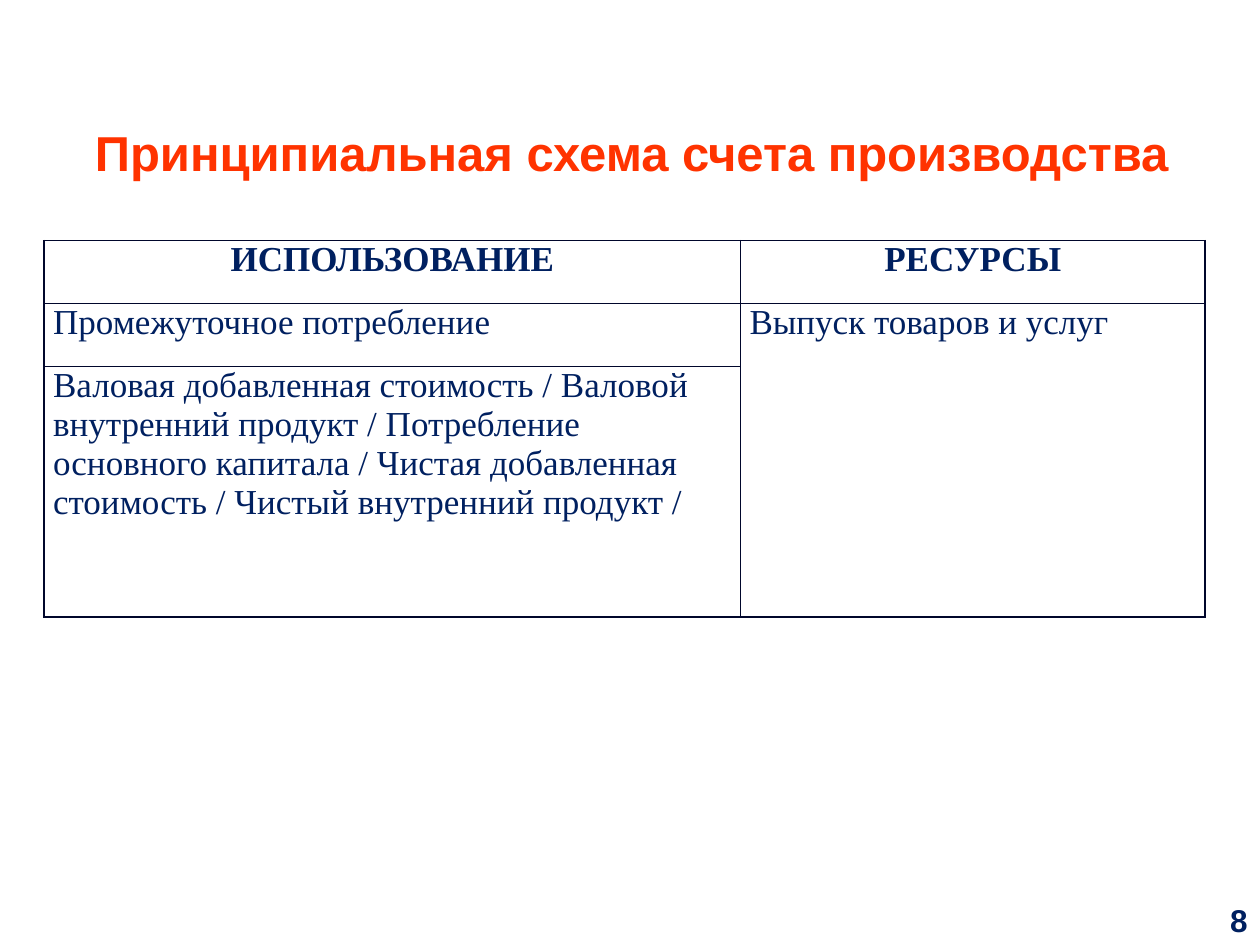
from dataclasses import dataclass

import lxml.etree
import pptx
import pptx.dml.color
import pptx.enum.text
import pptx.oxml.ns
import pptx.util

Cm = pptx.util.Cm
Align = pptx.enum.text.PP_ALIGN
Anchor = pptx.enum.text.MSO_ANCHOR


@dataclass(frozen=True)
class Theme:
    heading_font: str = "Arial"
    table_font: str = "Times New Roman"
    title_color: str = "FF3300"
    text_color: str = "002060"
    border_color: str = "00062B"
    background: str = "FFFFFF"
    title_size: int = 28
    table_size: int = 20
    number_size: int = 18
    border_width: int = 1


@dataclass(frozen=True)
class TextStyle:
    font: str
    size: int
    color: str
    bold: bool
    align: Align


@dataclass(frozen=True)
class AccountCell:
    row: int
    column: int
    text: str
    style: TextStyle


THEME = Theme()
TITLE = TextStyle(THEME.heading_font, THEME.title_size, THEME.title_color, True, Align.CENTER)
NUMBER = TextStyle(THEME.heading_font, THEME.number_size, THEME.text_color, True, Align.RIGHT)
HEADER = TextStyle(THEME.table_font, THEME.table_size, THEME.text_color, True, Align.CENTER)
BODY = TextStyle(THEME.table_font, THEME.table_size, THEME.text_color, False, Align.LEFT)

COLUMN_WIDTHS = (14.04, 9.36)
ROW_HEIGHTS = (1.27, 1.27, 5.05)
ACCOUNT_CELLS = (
    AccountCell(0, 0, "ИСПОЛЬЗОВАНИЕ", HEADER),
    AccountCell(0, 1, "РЕСУРСЫ", HEADER),
    AccountCell(1, 0, "Промежуточное потребление", BODY),
    AccountCell(1, 1, "Выпуск товаров и услуг", BODY),
    AccountCell(
        2,
        0,
        "Валовая добавленная стоимость / Валовой внутренний продукт / "
        "Потребление основного капитала / Чистая добавленная стоимость / "
        "Чистый внутренний продукт /",
        BODY,
    ),
)


def write_text(text_frame: pptx.text.text.TextFrame, text: str, style: TextStyle) -> None:
    text_frame.text = text
    text_frame.word_wrap = True
    paragraph = text_frame.paragraphs[0]
    paragraph.alignment = style.align
    for run in paragraph.runs:
        run.font.name = style.font
        run.font.size = pptx.util.Pt(style.size)
        run.font.bold = style.bold
        run.font.color.rgb = pptx.dml.color.RGBColor.from_string(style.color)


def format_cell(cell: pptx.table._Cell) -> None:
    cell.margin_left = cell.margin_right = Cm(0.18)
    cell.margin_top = cell.margin_bottom = 0
    cell.vertical_anchor = Anchor.TOP
    properties = cell._tc.get_or_add_tcPr()
    qualified = pptx.oxml.ns.qn
    for side in ("a:lnL", "a:lnR", "a:lnT", "a:lnB"):
        line = lxml.etree.SubElement(
            properties, qualified(side), w=str(pptx.util.Pt(THEME.border_width))
        )
        fill = lxml.etree.SubElement(line, qualified("a:solidFill"))
        lxml.etree.SubElement(fill, qualified("a:srgbClr"), val=THEME.border_color)
    cell.fill.background()


def add_title(slide: pptx.slide.Slide) -> None:
    title = slide.shapes.title
    title.left, title.top, title.width, title.height = Cm(0.53), Cm(2.34), Cm(24.41), Cm(1.45)
    write_text(title.text_frame, "Принципиальная схема счета производства", TITLE)
    title.text_frame.vertical_anchor = Anchor.MIDDLE


def add_account_table(slide: pptx.slide.Slide) -> None:
    shape = slide.shapes.add_table(
        len(ROW_HEIGHTS), len(COLUMN_WIDTHS), Cm(0.89), Cm(4.85),
        Cm(sum(COLUMN_WIDTHS)), Cm(sum(ROW_HEIGHTS)),
    )
    table = shape.table
    table.first_row = False
    table.horz_banding = False
    for column, width in zip(table.columns, COLUMN_WIDTHS):
        column.width = Cm(width)
    for row, height in zip(table.rows, ROW_HEIGHTS):
        row.height = Cm(height)
    for cell in table.iter_cells():
        format_cell(cell)
    table.cell(1, 1).merge(table.cell(2, 1))
    for item in ACCOUNT_CELLS:
        write_text(table.cell(item.row, item.column).text_frame, item.text, item.style)


def add_slide_number(slide: pptx.slide.Slide) -> None:
    shape = slide.shapes.add_textbox(Cm(24.1), Cm(18.06), Cm(1.3), Cm(0.99))
    write_text(shape.text_frame, "8", NUMBER)
    shape.text_frame.vertical_anchor = Anchor.BOTTOM


def main() -> None:
    presentation = pptx.Presentation()
    presentation.slide_width = Cm(25.4)
    presentation.slide_height = Cm(19.05)
    slide = presentation.slides.add_slide(presentation.slide_layouts[5])
    slide.background.fill.solid()
    slide.background.fill.fore_color.rgb = pptx.dml.color.RGBColor.from_string(THEME.background)
    add_slide_number(slide)
    add_account_table(slide)
    add_title(slide)
    presentation.save("out.pptx")


if __name__ == "__main__":
    main()
